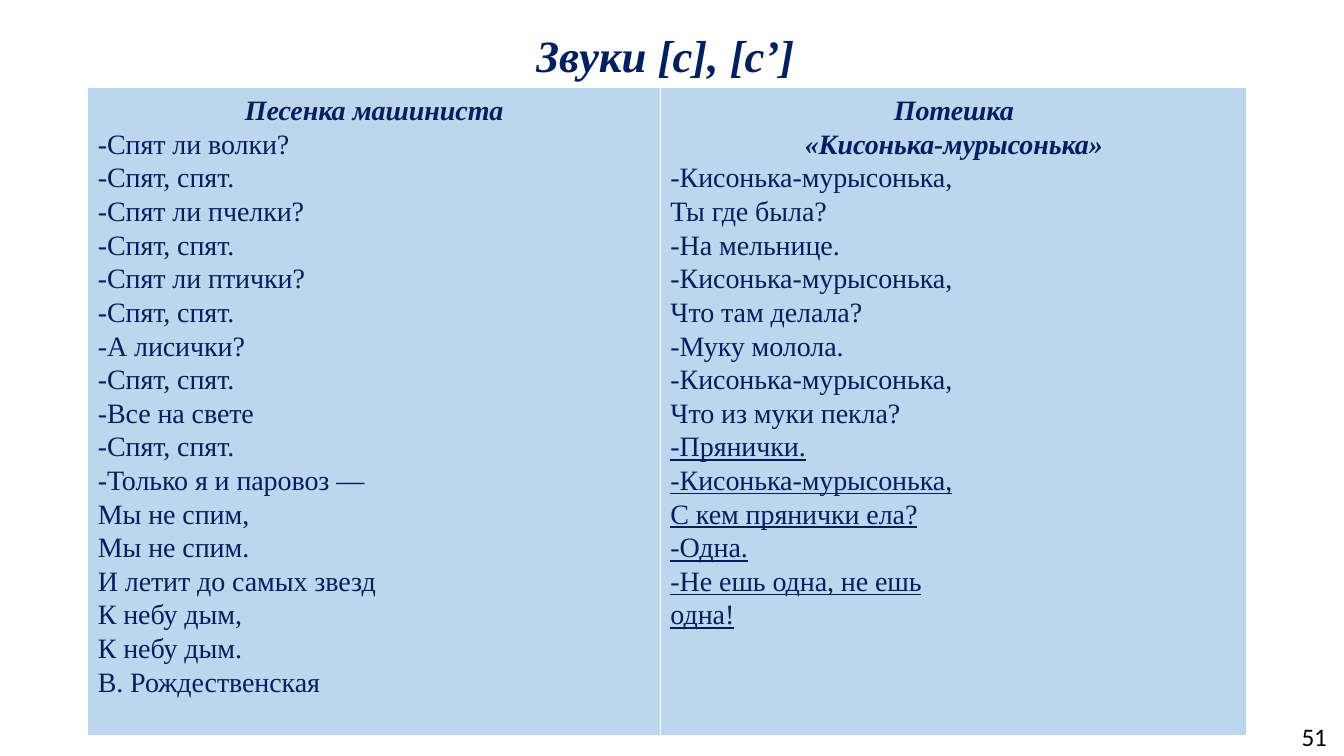
from lxml.etree import SubElement
from pptx import Presentation
from pptx.dml.color import RGBColor
from pptx.enum.shapes import MSO_CONNECTOR as Connector
from pptx.enum.text import PP_ALIGN as Align
from pptx.oxml.ns import qn
from pptx.util import Inches, Pt

NAVY = RGBColor(0x00, 0x1F, 0x5F)
PALE_BLUE = RGBColor(0xBC, 0xD6, 0xED)
WHITE = RGBColor(0xFF, 0xFF, 0xFF)
BLACK = RGBColor(0, 0, 0)
SERIF = "Times New Roman"

SONG_HEADING = ["Песенка машиниста"]
SONG = [
    "-Спят ли волки?",
    "-Спят, спят.",
    "-Спят ли пчелки?",
    "-Спят, спят.",
    "-Спят ли птички?",
    "-Спят, спят.",
    "-А лисички?",
    "-Спят, спят.",
    "-Все на свете",
    "-Спят, спят.",
    "-Только я и паровоз —",
    "Мы не спим,",
    "Мы не спим.",
    "И летит до самых звезд",
    "К небу дым,",
    "К небу дым.",
    "В. Рождественская",
]
RHYME_HEADING = ["Потешка", "«Кисонька-мурысонька»"]
RHYME = [
    "-Кисонька-мурысонька,",
    "Ты где была?",
    "-На мельнице.",
    "-Кисонька-мурысонька,",
    "Что там делала?",
    "-Муку молола.",
    "-Кисонька-мурысонька,",
    "Что из муки пекла?",
]
RHYME_UNDERLINED = [
    "-Прянички.",
    "-Кисонька-мурысонька,",
    "С кем прянички ела?",
    "-Одна.",
    "-Не ешь одна, не ешь",
    "одна!",
]


def style_paragraph(paragraph, size, spacing, name=SERIF, color=NAVY,
                    heading=False, underline=False, tracking=0):
    paragraph.line_spacing = Pt(spacing)
    for run in paragraph.runs:
        font = run.font
        font.name, font.size = name, Pt(size)
        font.bold = font.italic = heading
        font.underline = underline
        font.color.rgb = color
        run._r.get_or_add_rPr().set("spc", str(tracking))


def add_text(slide, box, text):
    frame = slide.shapes.add_textbox(*map(Inches, box)).text_frame
    frame.word_wrap = True
    frame.margin_left = frame.margin_right = 0
    frame.margin_top = frame.margin_bottom = 0
    frame.text = text
    return frame.paragraphs


def add_label(slide, box, text, size, spacing, **style):
    style_paragraph(add_text(slide, box, text)[0], size, spacing, **style)


def add_poem(slide, box, heading, verses, underlined):
    paragraphs = add_text(slide, box, "\n".join(heading + verses + underlined))
    underline_start = len(heading) + len(verses)
    for index, paragraph in enumerate(paragraphs):
        is_heading = index < len(heading)
        paragraph.alignment = Align.CENTER if is_heading else Align.LEFT
        style_paragraph(paragraph, 20, 24, heading=is_heading, tracking=-8,
                        underline=index >= underline_start)


def add_outline(slide, contours, closed):
    contours = [[(Inches(x), Inches(y)) for x, y in contour]
                for contour in contours]
    builder = slide.shapes.build_freeform(*contours[0][0])
    for index, (start, *points) in enumerate(contours):
        if index:
            builder.move_to(*start)
        builder.add_line_segments(points, close=closed)
    shape = builder.convert_to_shape()
    shape.shadow.inherit = False
    return shape


def add_panels(slide, box, divider):
    left, top, width, height = box
    right, bottom = left + width, top + height
    panels = add_outline(slide, [
        [(end, top), (start, top), (start, bottom), (end, bottom)]
        for start, end in ((left, divider), (divider, right))
    ], True)
    panels.fill.solid()
    panels.fill.fore_color.rgb = PALE_BLUE
    panels.line.fill.background()

    rules = [[(x, top), (x, bottom + 0.02)] for x in (divider, left, right)]
    rules.append([(left - 0.01, top), (right + 0.01, top)])
    grid = add_outline(slide, rules, False)
    grid.fill.background()
    grid.line.color.rgb = WHITE
    grid.line.width = Pt(1)

    ends = (left - 0.01, bottom, right + 0.01, bottom)
    base = slide.shapes.add_connector(Connector.STRAIGHT, *map(Inches, ends))
    base.line.color.rgb = WHITE
    base.line.width = Pt(3)
    SubElement(base._element.spPr, qn("a:effectLst"))


def add_poems(slide, box, divider):
    left, top, width, height = box
    right = left + width
    add_panels(slide, box, divider)
    columns = (
        (left, divider, SONG_HEADING, SONG, []),
        (divider, right, RHYME_HEADING, RHYME, RHYME_UNDERLINED),
    )
    for start, end, *poem in columns:
        inner = (start + 0.1, top + 0.05, end - start - 0.2, height - 0.4)
        add_poem(slide, inner, *poem)


def build_sounds_slide(presentation):
    slide = presentation.slides.add_slide(presentation.slide_layouts[6])
    add_poems(slide, (0.87, 0.87, 11.5, 6.44), 6.55)
    add_label(slide, (5.32, 0.28, 3.8, 0.54), "Звуки [с], [с’]", 32, 38.4,
              heading=True, tracking=-4)
    add_label(slide, (12.91, 7.2, 0.36, 0.3), "51", 18, 18.1,
              name="Calibri", color=BLACK, tracking=-20)


def main():
    presentation = Presentation()
    presentation.slide_width = Inches(13.33)
    presentation.slide_height = Inches(7.5)
    build_sounds_slide(presentation)
    presentation.save("out.pptx")


if __name__ == "__main__":
    main()
